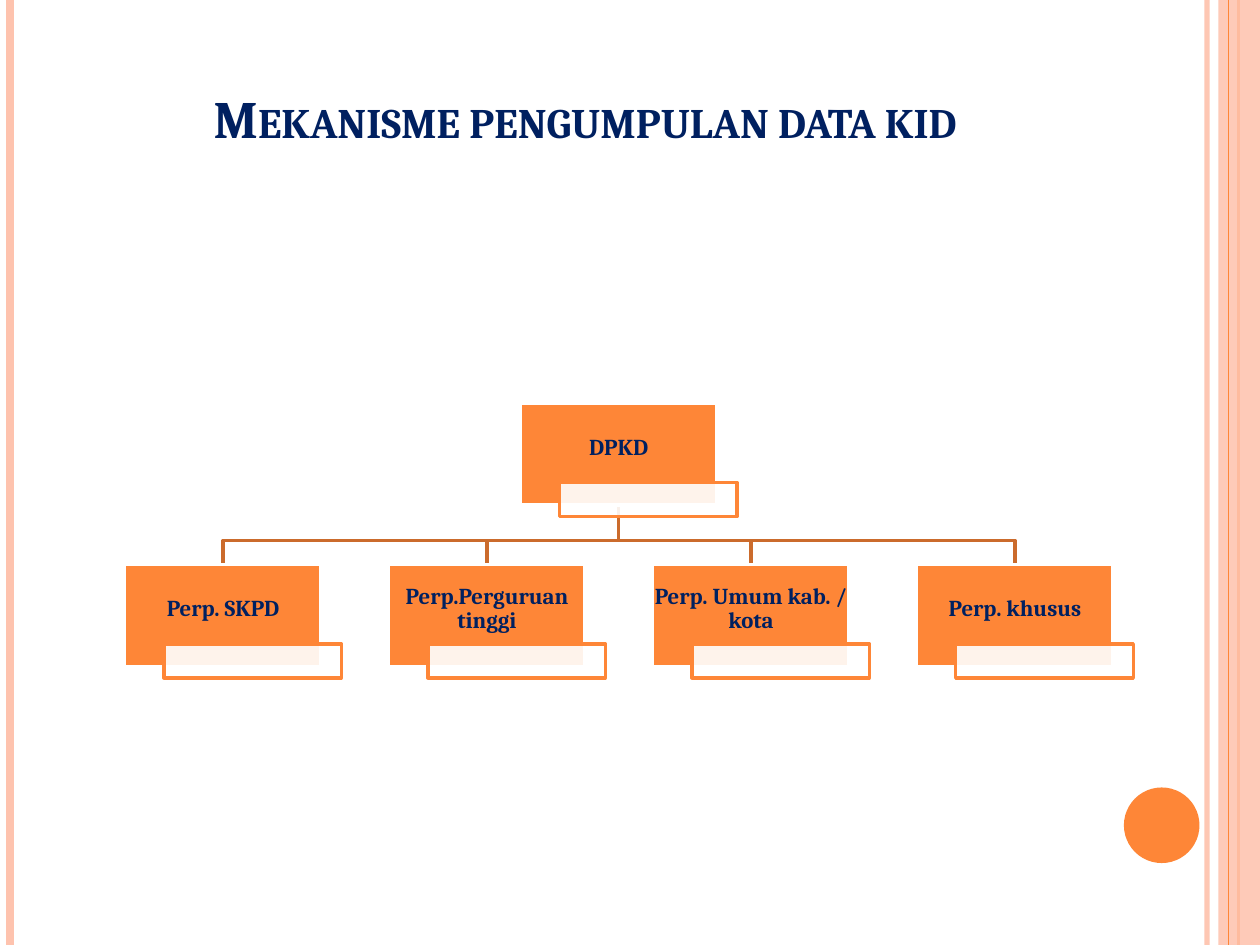
from dataclasses import dataclass

from lxml.etree import SubElement
from pptx import Presentation
from pptx.dml.color import RGBColor
from pptx.enum.shapes import MSO_CONNECTOR, MSO_SHAPE
from pptx.enum.text import MSO_ANCHOR, PP_ALIGN
from pptx.oxml.ns import qn
from pptx.util import Inches, Pt


@dataclass(frozen=True)
class Theme:
    font: str = "Cambria"
    navy: str = "002060"
    orange: str = "FE8637"
    peach: str = "FEC3AE"
    brown: str = "CB6B2C"
    white: str = "FFFFFF"
    title_size: int = 30
    box_size: int = 13
    line_width: int = 2


BOX_W, BOX_H = 1.56, 0.81
ROOT_X, ROOT_Y = 4.13, 3.2
CHILD_X, CHILD_Y, CHILD_STEP = 0.99, 4.48, 2.095
BEND_Y = 4.29
CHILDREN = ["Perp. SKPD", "Perp.Perguruan tinggi", "Perp. Umum kab. / kota",
            "Perp. khusus"]


def set_alpha(parent, percent):
    """Set the opacity of the solid fill directly under parent."""
    color = parent.find(qn("a:solidFill"))[0]
    SubElement(color, qn("a:alpha")).set("val", str(percent * 1000))


class SlideBuilder:
    def __init__(self, slide, theme):
        self.s = slide
        self.theme = theme

    def outline(self, shape, color, width):
        shape.line.color.rgb = RGBColor.from_string(color)
        shape.line.width = Pt(width)

    def rule(self, x, color, width, alpha=None):
        """Draw a vertical line over the full slide height."""
        c = self.s.shapes.add_connector(
            MSO_CONNECTOR.STRAIGHT, Inches(x), Inches(0), Inches(x), Inches(7.5))
        self.outline(c, color, width)
        sp_pr = c.element.spPr
        if alpha is not None:
            set_alpha(sp_pr.find(qn("a:ln")), alpha)
        SubElement(sp_pr, qn("a:effectLst"))

    def shape(self, kind, x, y, w, h, fill, line=None, alpha=None):
        sp = self.s.shapes.add_shape(kind, Inches(x), Inches(y), Inches(w), Inches(h))
        sp.shadow.inherit = False
        sp.fill.solid()
        sp.fill.fore_color.rgb = RGBColor.from_string(fill)
        if alpha is not None:
            set_alpha(sp.element.spPr, alpha)
        if line:
            self.outline(sp, line, self.theme.line_width)
        else:
            sp.line.fill.background()
        return sp

    def label(self, sp, text, size, anchor):
        """Put centred bold text in a shape and return its text frame."""
        tf = sp.text_frame
        tf.word_wrap = True
        tf.vertical_anchor = anchor
        p = tf.paragraphs[0]
        p.text = text
        p.alignment = PP_ALIGN.CENTER
        r = p.runs[0]
        r.font.name = self.theme.font
        r.font.size = Pt(size)
        r.font.bold = True
        r.font.color.rgb = RGBColor.from_string(self.theme.navy)
        return tf

    def title(self, text, x, y, w, h):
        sp = self.s.shapes.add_textbox(Inches(x), Inches(y), Inches(w), Inches(h))
        self.label(sp, text, self.theme.title_size, MSO_ANCHOR.BOTTOM)
        for r_pr in sp.element.iter(qn("a:rPr")):
            r_pr.set("cap", "small")

    def elbow(self, x1, y1, x2, y2, bend):
        """Draw a down-across-down branch that turns at height bend."""
        fb = self.s.shapes.build_freeform(Inches(x1), Inches(y1))
        points = [(x1, bend), (x2, bend), (x2, y2)]
        fb.add_line_segments([(Inches(x), Inches(y)) for x, y in points], close=False)
        sp = fb.convert_to_shape()
        sp.shadow.inherit = False
        sp.fill.background()
        self.outline(sp, self.theme.brown, self.theme.line_width)

    def org_box(self, text, x, y):
        """Draw an orange unit box with its overlapping blank label."""
        t = self.theme
        sp = self.shape(MSO_SHAPE.RECTANGLE, x, y, BOX_W, BOX_H, t.orange, t.white)
        tf = self.label(sp, text, t.box_size, MSO_ANCHOR.MIDDLE)
        tf.margin_left = tf.margin_right = tf.margin_top = Inches(0.01)
        tf.margin_bottom = Inches(0.11)
        tf.paragraphs[0].line_spacing = 0.9
        self.shape(MSO_SHAPE.RECTANGLE, x + 0.31, y + 0.63, 1.41, 0.27,
                   t.white, t.orange, alpha=90)


def main():
    prs = Presentation()
    prs.slide_width, prs.slide_height = Inches(10), Inches(7.5)
    theme = Theme()
    b = SlideBuilder(prs.slides.add_slide(prs.slide_layouts[6]), theme)

    b.rule(9.58, theme.peach, 3, alpha=93)
    b.rule(0.08, theme.peach, 4.5)
    b.rule(9.83, theme.orange, 1.5)
    b.shape(MSO_SHAPE.RECTANGLE, 9.67, 0, 0.33, 7.5, theme.peach, alpha=87)
    b.rule(9.75, theme.orange, 0.75)
    b.shape(MSO_SHAPE.OVAL, 8.92, 6.25, 0.6, 0.6, theme.orange)
    b.title("Mekanisme pengumpulan data kid ", 0.5, 0.3, 8.36, 0.93)

    child_xs = [CHILD_X + i * CHILD_STEP for i in range(len(CHILDREN))]
    for x in reversed(child_xs):
        b.elbow(ROOT_X + BOX_W / 2, ROOT_Y + BOX_H, x + BOX_W / 2, CHILD_Y, BEND_Y)
    b.org_box("DPKD", ROOT_X, ROOT_Y)
    for text, x in zip(CHILDREN, child_xs):
        b.org_box(text, x, CHILD_Y)

    prs.save("out.pptx")


if __name__ == "__main__":
    main()
